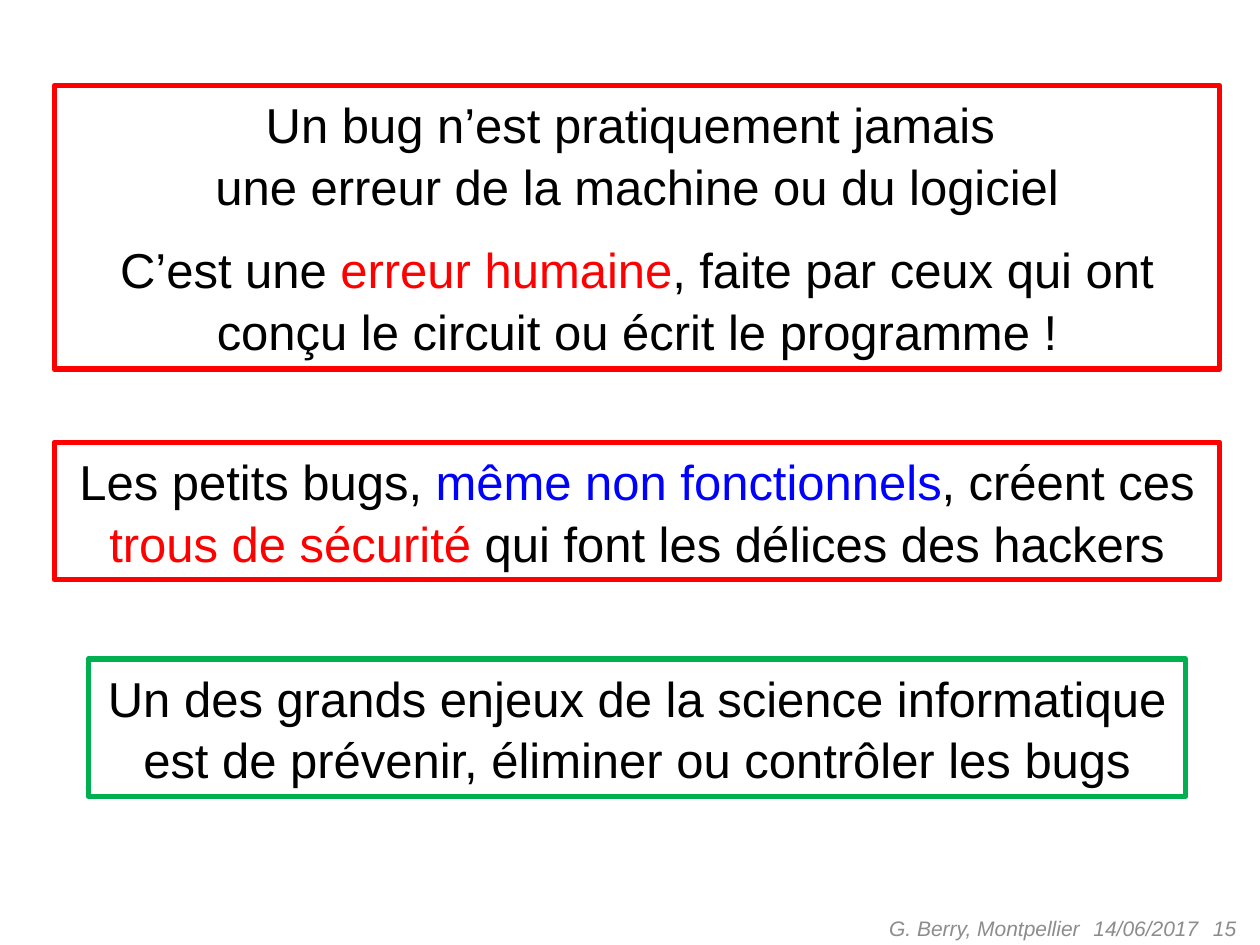
from dataclasses import dataclass

from pptx import Presentation
from pptx.dml.color import RGBColor
from pptx.enum import shapes, text
from pptx.util import Inches, Pt


@dataclass(frozen=True)
class Theme:
    font: str = "Arial"
    black: str = "000000"
    red: str = "FF0000"
    blue: str = "0000FF"
    green: str = "00B050"
    grey: str = "8C8C8C"
    body_size: int = 28
    footer_size: int = 12
    border: int = 3
    line_spacing: float = 1.05
    paragraph_gap: int = 12


THEME = Theme()
FOOTER_TOP, FOOTER_HEIGHT = 7.17, 0.4


def add_run(paragraph, wording, size, color, italic=False):
    run = paragraph.add_run()
    run.text = wording
    run.font.name = THEME.font
    run.font.size = Pt(size)
    run.font.italic = italic
    run.font.color.rgb = RGBColor.from_string(color)


def add_message(slide, box, border_color, paragraphs, wrap=True):
    """Add a framed message; paragraphs are (space before, [(wording, color)])."""
    shape = slide.shapes.add_shape(
        shapes.MSO_SHAPE.RECTANGLE, *(Inches(length) for length in box))
    shape.shadow.inherit = False
    shape.fill.background()
    shape.line.color.rgb = RGBColor.from_string(border_color)
    shape.line.width = Pt(THEME.border)

    frame = shape.text_frame
    frame.word_wrap = wrap
    frame.auto_size = text.MSO_AUTO_SIZE.SHAPE_TO_FIT_TEXT
    frame.vertical_anchor = text.MSO_ANCHOR.TOP
    for index, (space_before, runs) in enumerate(paragraphs):
        paragraph = frame.add_paragraph() if index else frame.paragraphs[0]
        paragraph.alignment = text.PP_ALIGN.CENTER
        paragraph.line_spacing = THEME.line_spacing
        paragraph.space_before = Pt(space_before)
        for wording, color in runs:
            add_run(paragraph, wording, THEME.body_size, color)


def add_footer(slide, left, width, wording, alignment):
    shape = slide.shapes.add_textbox(
        Inches(left), Inches(FOOTER_TOP), Inches(width), Inches(FOOTER_HEIGHT))
    frame = shape.text_frame
    frame.word_wrap = True
    frame.vertical_anchor = text.MSO_ANCHOR.MIDDLE
    paragraph = frame.paragraphs[0]
    paragraph.alignment = alignment
    add_run(paragraph, wording, THEME.footer_size, THEME.grey, italic=True)


def main():
    presentation = Presentation()
    presentation.slide_width = Inches(10)
    presentation.slide_height = Inches(7.5)
    slide = presentation.slides.add_slide(presentation.slide_layouts[6])

    align = text.PP_ALIGN
    add_footer(slide, 8.58, 2.33, "14/06/2017", align.LEFT)
    add_footer(slide, 7.58, 2.33, "15", align.RIGHT)
    add_footer(slide, 5.08, 3.59, "G. Berry, Montpellier", align.RIGHT)

    black, red, blue = THEME.black, THEME.red, THEME.blue
    add_message(slide, (0.43, 0.68, 9.25, 2.25), red, [
        (0, [("Un bug n’est pratiquement jamais ", black)]),
        (0, [("une erreur de la machine ou du logiciel", black)]),
        (THEME.paragraph_gap, [
            ("C’est une ", black),
            ("erreur humaine", red),
            (", faite par ceux qui ont conçu le circuit"
             " ou écrit le programme !", black),
        ]),
    ])
    add_message(slide, (0.43, 3.51, 9.25, 1.09), red, [
        (0, [
            ("Les petits bugs, ", black),
            ("même non fonctionnels", blue),
            (", créent ces ", black),
            ("trous de sécurité ", red),
            ("qui font les délices des hackers", black),
        ]),
    ])
    add_message(slide, (0.7, 5.23, 8.71, 1.09), THEME.green, [
        (0, [("Un des grands enjeux de la science informatique", black)]),
        (0, [("est de prévenir, éliminer ou contrôler les bugs", black)]),
    ], wrap=False)

    presentation.save("out.pptx")


if __name__ == "__main__":
    main()
